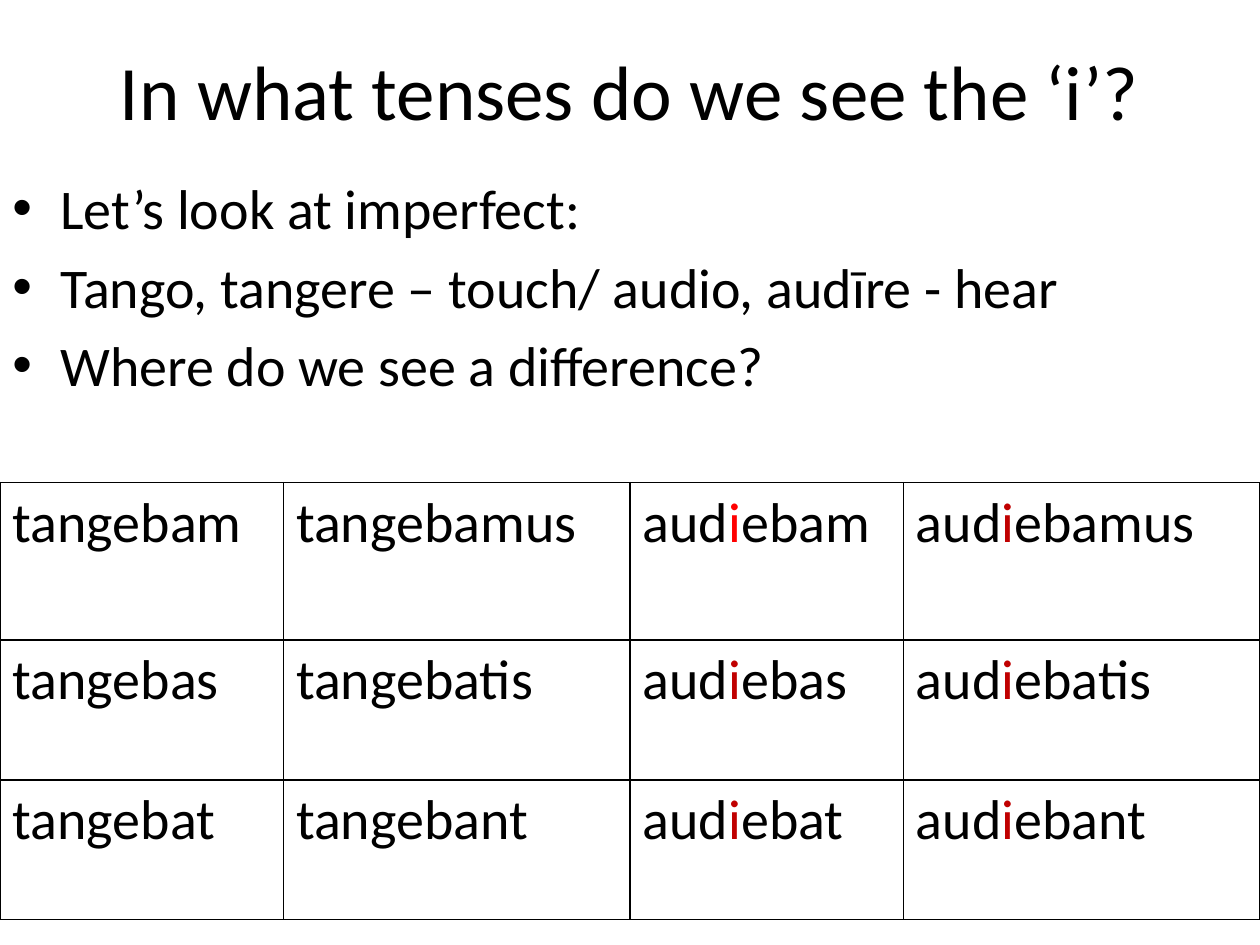
from dataclasses import dataclass
from lxml.etree import SubElement
from pptx import Presentation
from pptx.dml.color import RGBColor
from pptx.enum.text import MSO_ANCHOR, PP_ALIGN
from pptx.oxml.ns import qn
from pptx.util import Inches, Pt


@dataclass(frozen=True)
class Theme:
    font: str = "Calibri"
    ink: str = "000000"
    bright: str = "FF0000"
    dark: str = "C00000"
    title: int = 44
    body: int = 32
    gap: float = 6.4
    rule: int = 1


THEME = Theme()
TITLE = "In what tenses do we see the ‘i’?"
POINTS = [
    "Let’s look at imperfect:",
    "Tango, tangere – touch/ audio, audīre - hear",
    "Where do we see a difference?",
]
ENDINGS = [("bam", "bamus"), ("bas", "batis"), ("bat", "bant")]
STEMS = [("tange", "", ""), ("aud", "i", "e")]
COLS = [2.25, 2.75, 2.17, 2.83]
ROWS = [1.25, 1.11, 1.11]


def style(run, size, color=THEME.ink):
    run.font.name = THEME.font
    run.font.size = Pt(size)
    run.font.color.rgb = RGBColor.from_string(color)


def add_frame(slide, box):
    frame = slide.shapes.add_textbox(*map(Inches, box)).text_frame
    frame.word_wrap = True
    return frame


def add_title(slide, box):
    frame = add_frame(slide, box)
    frame.vertical_anchor = MSO_ANCHOR.MIDDLE
    frame.text = TITLE
    line = frame.paragraphs[0]
    line.alignment = PP_ALIGN.CENTER
    style(line.runs[0], THEME.title)


def add_points(slide, box):
    frame = add_frame(slide, box)
    frame.text = "\n".join(POINTS)
    for line in frame.paragraphs:
        line.space_before = Pt(THEME.gap)
        style(line.runs[0], THEME.body)
        props = line._p.get_or_add_pPr()
        props.set("marL", str(Inches(0.38)))
        props.set("indent", str(Inches(-0.38)))
        SubElement(props, qn("a:buFont"), typeface="Arial")
        SubElement(props, qn("a:buChar"), char="•")


def add_borders(cell):
    props = cell._tc.get_or_add_tcPr()
    for spot, side in enumerate(("lnL", "lnR", "lnT", "lnB")):
        line = props.makeelement(qn(f"a:{side}"), {"w": str(Pt(THEME.rule))})
        fill = SubElement(line, qn("a:solidFill"))
        SubElement(fill, qn("a:srgbClr"), val=THEME.ink)
        props.insert(spot, line)


def fill_cell(cell, parts, accent):
    cell.fill.background()
    add_borders(cell)
    line = cell.text_frame.paragraphs[0]
    for text, color in zip(parts, (THEME.ink, accent, THEME.ink)):
        if text:
            run = line.add_run()
            run.text = text
            style(run, THEME.body, color)


def add_verbs(slide, box):
    frame = slide.shapes.add_table(len(ROWS), len(COLS), *map(Inches, box))
    table = frame.table
    table.first_row = table.horz_banding = False
    for col, width in zip(table.columns, COLS):
        col.width = Inches(width)
    for row, height in zip(table.rows, ROWS):
        row.height = Inches(height)
    for r, pair in enumerate(ENDINGS):
        for c in range(len(COLS)):
            stem, vowel, link = STEMS[c // 2]
            end = pair[c % 2]
            parts = (stem, vowel, link + end) if vowel else (stem + end,)
            accent = THEME.bright if (r, c) == (0, 2) else THEME.dark
            fill_cell(table.cell(r, c), parts, accent)


def main():
    deck = Presentation()
    deck.slide_width, deck.slide_height = Inches(10), Inches(7.5)
    slide = deck.slides.add_slide(deck.slide_layouts[6])
    add_title(slide, (0, 0, 10, 1.42))
    add_points(slide, (0, 1.33, 10, 6.17))
    add_verbs(slide, (0, 3.83, sum(COLS), sum(ROWS)))
    deck.save("out.pptx")


if __name__ == "__main__":
    main()
